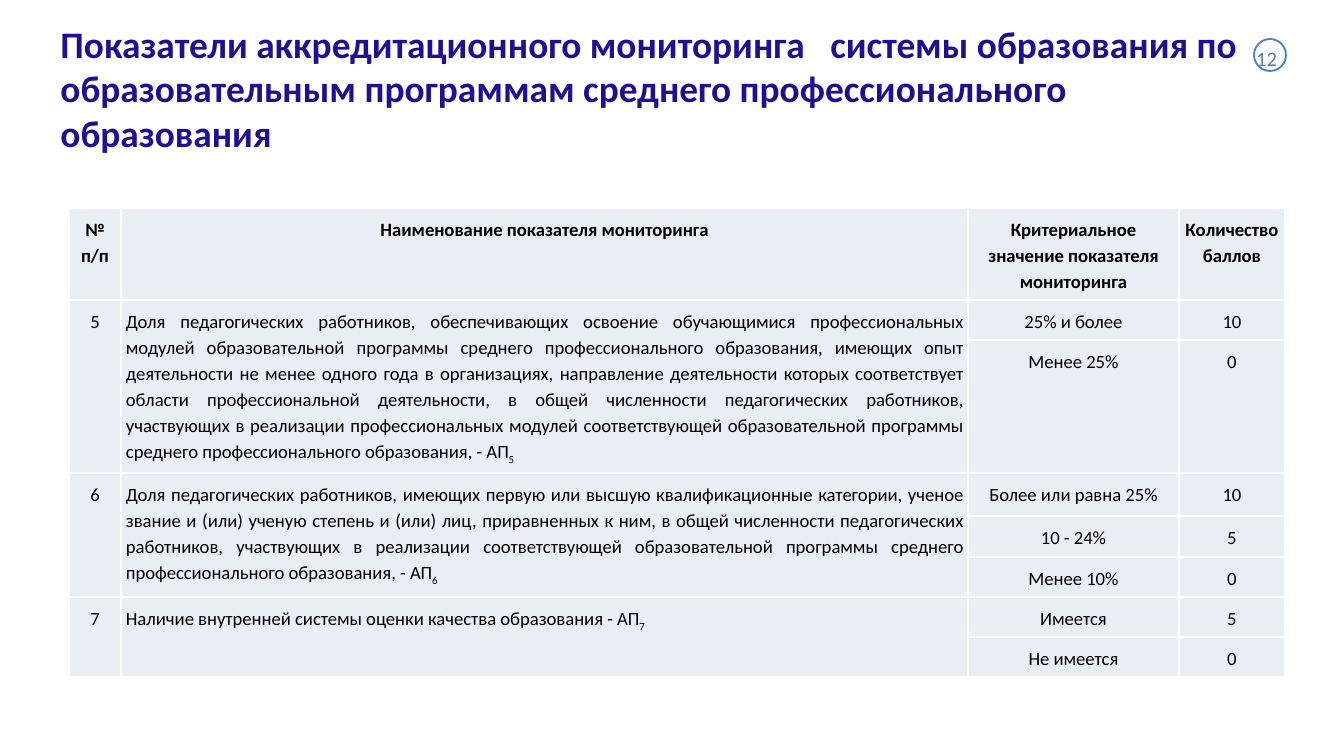
from lxml import etree
from pptx import Presentation
from pptx.dml.color import RGBColor
from pptx.enum.shapes import MSO_SHAPE
from pptx.enum.text import MSO_ANCHOR, MSO_AUTO_SIZE, PP_ALIGN
from pptx.oxml.ns import qn
from pptx.util import Pt

PX = 9144000 / 1344  # EMU per px on a slide 1344 px wide
FONT = "Calibri"
NAVY = RGBColor(0x1F, 0x0F, 0x93)
BLUE = RGBColor(0x4F, 0x81, 0xBD)
PALE = RGBColor(0xE9, 0xED, 0xF4)
BLACK = RGBColor(0, 0, 0)
WHITE = RGBColor(0xFF, 0xFF, 0xFF)
CENTER, JUSTIFY, LEFT = PP_ALIGN.CENTER, PP_ALIGN.JUSTIFY, PP_ALIGN.LEFT
TOP = MSO_ANCHOR.TOP
NO_AUTOFIT = MSO_AUTO_SIZE.NONE
OVAL = MSO_SHAPE.OVAL
TITLE_ONLY = 5

TITLE = ("Показатели аккредитационного мониторинга   системы образования по "
         "образовательным программам среднего профессионального образования")
HEADERS = ["№ п/п", "Наименование показателя мониторинга",
           "Критериальное значение показателя мониторинга", "Количество баллов"]
# Number, indicator name, (criterion, points) pairs
INDICATORS = [
    ("5", "Доля педагогических работников, обеспечивающих освоение обучающимися "
          "профессиональных модулей образовательной программы среднего "
          "профессионального образования, имеющих опыт деятельности не менее одного "
          "года в организациях, направление деятельности которых соответствует "
          "области профессиональной деятельности, в общей численности педагогических "
          "работников, участвующих в реализации профессиональных модулей "
          "соответствующей образовательной программы среднего профессионального "
          "образования, - АП",
     [("25% и более", "10"), ("Менее 25%", "0")]),
    ("6", "Доля педагогических работников, имеющих первую или высшую "
          "квалификационные категории, ученое звание и (или) ученую степень и (или) "
          "лиц, приравненных к ним, в общей численности педагогических работников, "
          "участвующих в реализации соответствующей образовательной программы "
          "среднего профессионального образования, - АП",
     [("Более или равна 25%", "10"), ("10 - 24%", "5"), ("Менее 10%", "0")]),
    ("7", "Наличие внутренней системы оценки качества образования - АП",
     [("Имеется", "5"), ("Не имеется", "0")]),
]
COLUMN_WIDTHS = [52, 847, 211, 106]
ROW_HEIGHTS = [91, 40, 133, 43, 41, 40, 39, 39]


def px(value):
    return round(value * PX)


def format_run(run, size, color, bold=False):
    run.font.name = FONT
    run.font.size = Pt(size)
    run.font.bold = bold
    run.font.color.rgb = color


def add_title(slide, left, top, width, height):
    title = slide.shapes.title
    title.left, title.top, title.width, title.height = map(px, (left, top, width, height))
    frame = title.text_frame
    frame.text = TITLE
    frame.word_wrap = True
    frame.auto_size = NO_AUTOFIT
    frame.vertical_anchor = TOP
    paragraph = frame.paragraphs[0]
    paragraph.alignment = LEFT
    format_run(paragraph.runs[0], 20, NAVY, True)


def style_cell(cell):
    cell.margin_left = cell.margin_right = px(5)
    cell.margin_top = cell.margin_bottom = px(7)
    properties = cell._tc.get_or_add_tcPr()
    for side in ("a:lnL", "a:lnR", "a:lnT", "a:lnB"):
        line = etree.SubElement(properties, qn(side), w=str(Pt(1)))
        fill = etree.SubElement(line, qn("a:solidFill"))
        etree.SubElement(fill, qn("a:srgbClr"), val=str(WHITE))
    cell.fill.solid()
    cell.fill.fore_color.rgb = PALE


def write_cell(cell, text, bold=False, alignment=CENTER, subscript=None):
    cell.text_frame.text = text
    paragraph = cell.text_frame.paragraphs[0]
    paragraph.alignment = alignment
    paragraph.line_spacing = 1.15
    if subscript:
        run = paragraph.add_run()
        run.text = subscript
        run.font._element.set("baseline", "-25000")
    for run in paragraph.runs:
        format_run(run, 10, BLACK, bold)


def add_indicator_table(slide, left, top):
    table = slide.shapes.add_table(
        len(ROW_HEIGHTS), len(COLUMN_WIDTHS), px(left), px(top),
        px(sum(COLUMN_WIDTHS)), px(sum(ROW_HEIGHTS))).table
    table.first_row = table.horz_banding = False
    for column, width in zip(table.columns, COLUMN_WIDTHS):
        column.width = px(width)
    for row, height in zip(table.rows, ROW_HEIGHTS):
        row.height = px(height)
    for cell in table.iter_cells():
        style_cell(cell)

    for column, header in enumerate(HEADERS):
        write_cell(table.cell(0, column), header, bold=True)

    # Each indicator spans one row per criterion
    first = 1
    for number, name, criteria in INDICATORS:
        last = first + len(criteria) - 1
        for column in (0, 1):
            table.cell(first, column).merge(table.cell(last, column))
        write_cell(table.cell(first, 0), number)
        write_cell(table.cell(first, 1), name, alignment=JUSTIFY, subscript=number)
        for row, (criterion, points) in enumerate(criteria, first):
            write_cell(table.cell(row, 2), criterion)
            write_cell(table.cell(row, 3), points)
        first = last + 1


def add_page_number(slide, left, top, width, height):
    # Ring
    ring = slide.shapes.add_shape(OVAL, px(left + 11), px(top), px(32), px(32))
    ring.shadow.inherit = False
    ring.fill.solid()
    ring.fill.fore_color.rgb = WHITE
    ring.line.color.rgb = BLUE
    ring.line.width = Pt(1)
    # Number
    number = slide.shapes.add_textbox(px(left), px(top), px(width), px(height))
    number.text_frame.text = "12"
    number.text_frame.word_wrap = True
    format_run(number.text_frame.paragraphs[0].runs[0], 11, BLUE)


def main():
    presentation = Presentation()
    presentation.slide_width, presentation.slide_height = px(1344), px(756)
    slide = presentation.slides.add_slide(presentation.slide_layouts[TITLE_ONLY])
    add_indicator_table(slide, 69, 208)
    add_title(slide, 47, 14, 1230, 153)
    add_page_number(slide, 1243, 39, 52, 39)
    presentation.save("out.pptx")


if __name__ == "__main__":
    main()
